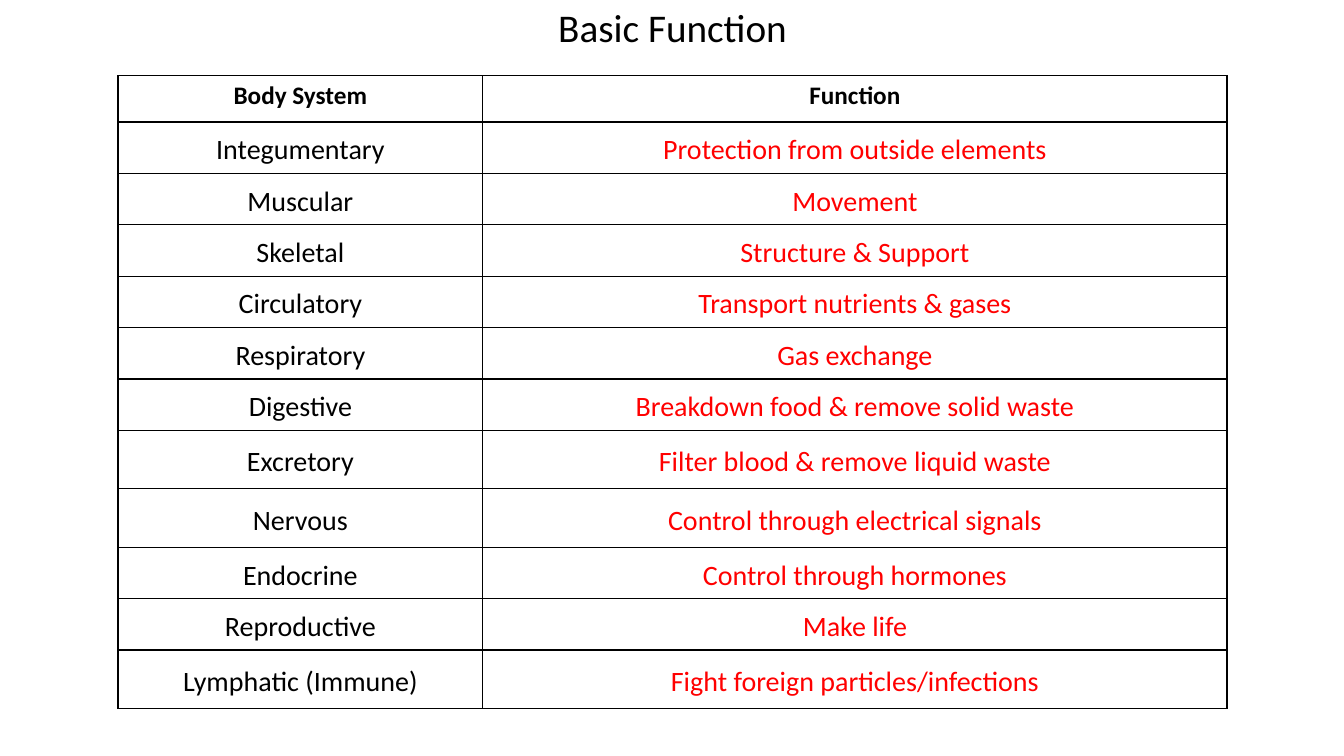
from lxml import etree
from pptx import Presentation
from pptx import util as u
from pptx.dml.color import RGBColor
from pptx.enum import text
from pptx.oxml import ns

BLACK = RGBColor(0x00, 0x00, 0x00)
RED = RGBColor(0xFF, 0x00, 0x00)
FONT = "Calibri"
HEADINGS = ("Body System", "Function")
HEADING_HEIGHT = 0.46
ROW_HEIGHT = 0.51
TALL_ROW_HEIGHT = 0.58
SYSTEM_SHARE = 0.329
SYSTEMS = [
    ("Integumentary", "Protection from outside elements", ROW_HEIGHT),
    ("Muscular", "Movement", ROW_HEIGHT),
    ("Skeletal", "Structure & Support", ROW_HEIGHT),
    ("Circulatory", "Transport nutrients & gases", ROW_HEIGHT),
    ("Respiratory", "Gas exchange", ROW_HEIGHT),
    ("Digestive", "Breakdown food & remove solid waste", ROW_HEIGHT),
    ("Excretory", "Filter blood & remove liquid waste", TALL_ROW_HEIGHT),
    ("Nervous", "Control through electrical signals", TALL_ROW_HEIGHT),
    ("Endocrine", "Control through hormones", ROW_HEIGHT),
    ("Reproductive", "Make life", ROW_HEIGHT),
    ("Lymphatic (Immune)", "Fight foreign particles/infections", TALL_ROW_HEIGHT),
]


def write_centred(frame, words, size, color, bold=False):
    """Write one centred run into a text frame and return its paragraph."""
    para = frame.paragraphs[0]
    para.alignment = text.PP_ALIGN.CENTER
    span = para.add_run()
    span.text = words
    span.font.name = FONT
    span.font.size = u.Pt(size)
    span.font.bold = bold
    span.font.color.rgb = color
    return para


def outline_cell(cell):
    """Draw a thin black border on all four sides of a cell."""
    properties = cell._tc.get_or_add_tcPr()
    for side in ("lnL", "lnR", "lnT", "lnB"):
        line = etree.SubElement(properties, ns.qn(f"a:{side}"), w=str(u.Pt(1)))
        fill = etree.SubElement(line, ns.qn("a:solidFill"))
        etree.SubElement(fill, ns.qn("a:srgbClr"), val=str(BLACK))


def fill_cell(cell, words, size, color, anchor, bold=False):
    """Style one table cell and write its words."""
    outline_cell(cell)
    cell.fill.background()
    cell.margin_left = cell.margin_right = u.Inches(0.04)
    cell.margin_top = cell.margin_bottom = 0
    cell.vertical_anchor = anchor
    para = write_centred(cell.text_frame, words, size, color, bold)
    para.line_spacing = 1.15


def add_title(page, left, top, width, height):
    """Place the slide title in the given box."""
    box = page.shapes.add_textbox(*map(u.Inches, (left, top, width, height)))
    frame = box.text_frame
    frame.word_wrap = True
    frame.vertical_anchor = text.MSO_ANCHOR.MIDDLE
    write_centred(frame, "Basic Function", 28, BLACK)


def add_system_table(page, left, top, width):
    """Place the table of body systems and their functions."""
    heights = [HEADING_HEIGHT] + [height for _, _, height in SYSTEMS]
    frame = page.shapes.add_table(
        len(heights), len(HEADINGS),
        *map(u.Inches, (left, top, width, sum(heights))))
    table = frame.table
    table.first_row = table.horz_banding = False
    for column, share in zip(table.columns, (SYSTEM_SHARE, 1 - SYSTEM_SHARE)):
        column.width = u.Inches(width * share)
    for row, height in zip(table.rows, heights):
        row.height = u.Inches(height)
    for column, heading in enumerate(HEADINGS):
        fill_cell(table.cell(0, column), heading, 18, BLACK,
                  text.MSO_ANCHOR.TOP, bold=True)
    for row, (system, function, _) in enumerate(SYSTEMS, start=1):
        for column, (words, color) in enumerate(((system, BLACK), (function, RED))):
            fill_cell(table.cell(row, column), words, 20, color,
                      text.MSO_ANCHOR.MIDDLE)


def main():
    """Build and save the deck."""
    deck = Presentation()
    deck.slide_width, deck.slide_height = u.Inches(13.33), u.Inches(7.5)
    page = deck.slides.add_slide(deck.slide_layouts[6])
    add_title(page, 2.17, 0, 9, 0.53)
    add_system_table(page, 1.17, 0.75, 11)
    deck.save("out.pptx")


if __name__ == "__main__":
    main()
